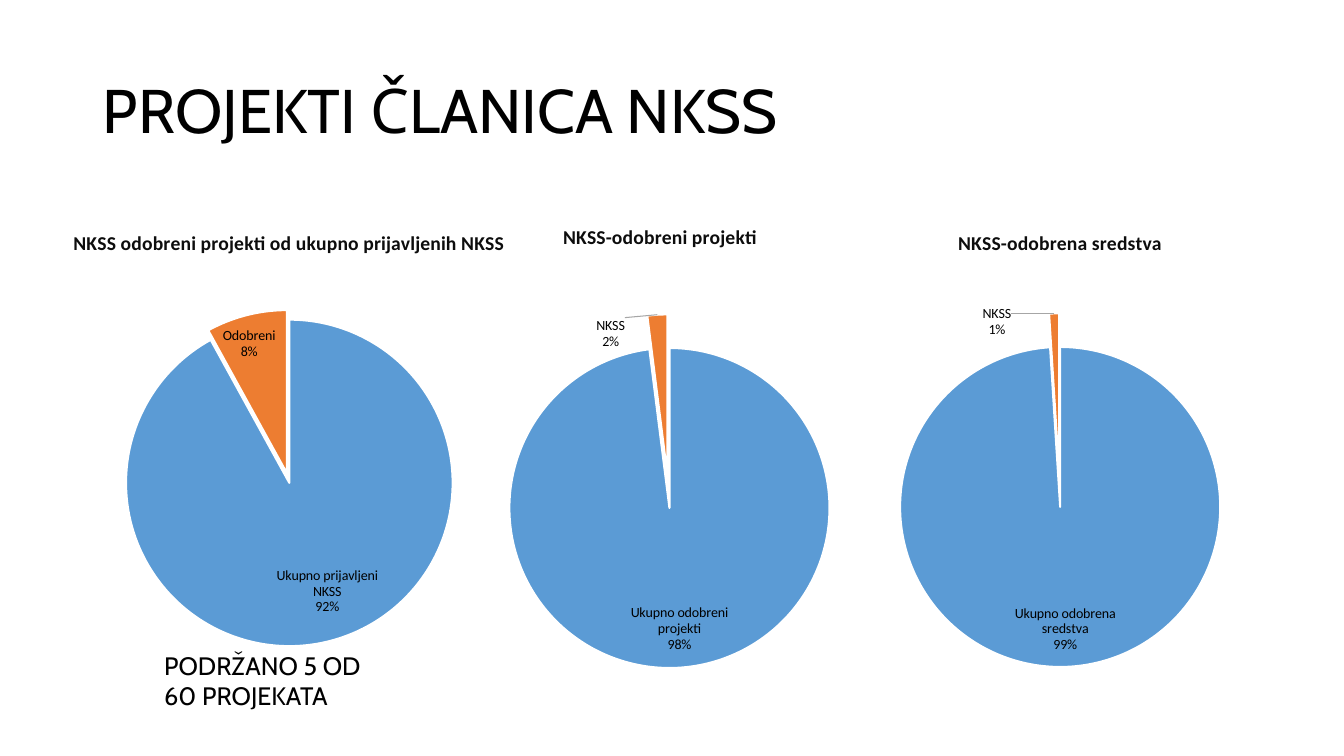
"""Build a slide with three pie charts on the projects of NKSS members."""
from lxml.etree import SubElement
from pptx import Presentation
from pptx.chart.data import CategoryChartData
from pptx.dml.color import RGBColor
from pptx.enum.chart import XL_CHART_TYPE, XL_LABEL_POSITION
from pptx.enum.text import MSO_ANCHOR, PP_ALIGN
from pptx.oxml.ns import qn
from pptx.util import Inches, Pt


def write_text(frame, text, *, size, font="Cabin", color="000000", bold=False, spacing=1.0):
    """Fill a text frame, one paragraph per line of text."""
    frame.text = text
    for paragraph in frame.paragraphs:
        paragraph.alignment = PP_ALIGN.LEFT
        paragraph.line_spacing = spacing
        paragraph.font.size = Pt(size)
        paragraph.font.name = font
        paragraph.font.bold = bold
        paragraph.font.color.rgb = RGBColor.from_string(color)


def make_layout(parent, index, **settings):
    """Insert a manual chart layout at the given child index."""
    layout = parent.makeelement(qn("c:layout"))
    manual = SubElement(layout, qn("c:manualLayout"))
    for name, value in settings.items():
        SubElement(manual, qn(f"c:{name}")).set("val", str(value))
    for existing in parent.findall(qn("c:layout")):
        parent.remove(existing)
    parent.insert(index, layout)


presentation = Presentation()
presentation.slide_width = Inches(13.33)
presentation.slide_height = Inches(7.5)
slide = presentation.slides.add_slide(presentation.slide_layouts[5])

title = slide.shapes.title
title.left, title.top, title.width, title.height = map(Inches, (0.92, 0.4, 11.5, 1.45))
title.text_frame.vertical_anchor = MSO_ANCHOR.MIDDLE
write_text(title.text_frame, "PROJEKTI ČLANICA NKSS", size=44, spacing=0.9)

pies = [
    dict(title="NKSS odobreni projekti od ukupno prijavljenih NKSS",
         shares={"Ukupno prijavljeni NKSS": 92, "Odobreni": 8},
         box=(-0.13, 2.1, 6, 4.55), title_at=(0.137, 0.03),
         plot=(0.23, 0.235, 0.54, 0.713), explosion=6, label_shift=None),
    dict(title="NKSS-odobreni projekti",
         shares={"Ukupno odobreni projekti": 98, "NKSS": 2},
         box=(4.55, 2.1, 4.18, 5.01), title_at=(0.239, 0.016),
         plot=(0.12, 0.27, 0.76, 0.634), explosion=21, label_shift=(-0.11, 0.08)),
    dict(title="NKSS-odobrena sredstva",
         shares={"Ukupno odobrena sredstva": 99, "NKSS": 1},
         box=(8.42, 2.1, 4.19, 5.01), title_at=(0.25, 0.028),
         plot=(0.12, 0.268, 0.76, 0.634), explosion=21, label_shift=(-0.135, 0.06)),
]

for pie in pies:
    chart_data = CategoryChartData(number_format="0")
    chart_data.categories = list(pie["shares"])
    chart_data.add_series("Series 1", list(pie["shares"].values()))
    chart = slide.shapes.add_chart(
        XL_CHART_TYPE.PIE, *map(Inches, pie["box"]), chart_data).chart
    chart.has_legend = False
    chart.font.size = Pt(10)
    chart.font.name = "Calibri"
    chart.font.color.rgb = RGBColor.from_string("000000")

    chart.has_title = True
    write_text(chart.chart_title.text_frame, pie["title"],
               size=14, font="Calibri", color="0D0D0D", bold=True)
    chart_title = chart.chart_title._element
    x, y = pie["title_at"]
    make_layout(chart_title, 1, xMode="edge", yMode="edge", x=x, y=y)

    plot = chart.plots[0]
    plot.vary_by_categories = True
    x, y, width, height = pie["plot"]
    make_layout(plot._element.getparent(), 0, layoutTarget="inner",
                xMode="edge", yMode="edge", x=x, y=y, w=width, h=height)

    series = plot.series[0]
    for index, color in enumerate(("5B9BD5", "ED7D31")):
        point_format = series.points[index].format
        point_format.fill.solid()
        point_format.fill.fore_color.rgb = RGBColor.from_string(color)
        point_format.line.color.rgb = RGBColor.from_string("FFFFFF")
        point_format.line.width = Pt(1.5)
    slice_element = series._element.findall(qn("c:dPt"))[1]
    explosion = slice_element.makeelement(qn("c:explosion"), {"val": str(pie["explosion"])})
    slice_element.find(qn("c:spPr")).addprevious(explosion)

    labels = series.data_labels
    labels.number_format = "0%"
    labels.number_format_is_linked = False
    labels.position = XL_LABEL_POSITION.BEST_FIT
    labels.show_category_name = True
    labels.show_percentage = True
    labels.show_value = False
    label_elements = [labels._element]

    if pie["label_shift"]:
        series.points[1].data_label.position = XL_LABEL_POSITION.OUTSIDE_END
        label = labels._element.find(qn("c:dLbl"))
        for name, value in (("showVal", "0"), ("showCatName", "1"), ("showPercent", "1")):
            label.find(qn(f"c:{name}")).set("val", value)
        x, y = pie["label_shift"]
        make_layout(label, 1, x=x, y=y)
        label.insert(2, label.makeelement(
            qn("c:numFmt"), {"formatCode": "0%", "sourceLinked": "0"}))
        label_elements.append(label)

    for element in label_elements:
        separator = element.makeelement(qn("c:separator"))
        separator.text = "\n"
        last_flag = element.find(qn("c:showBubbleSize"))
        if last_flag is None:
            last_flag = element.find(qn("c:showPercent"))
        last_flag.addnext(separator)

    leader_lines = SubElement(labels._element, qn("c:leaderLines"))
    leader_shape = SubElement(leader_lines, qn("c:spPr"))
    leader_line = SubElement(leader_shape, qn("a:ln"), w=str(Pt(0.75)))
    leader_fill = SubElement(leader_line, qn("a:solidFill"))
    SubElement(leader_fill, qn("a:srgbClr"), val="A6A6A6")

caption = slide.shapes.add_textbox(*map(Inches, (1.53, 6.4, 2.65, 0.71)))
caption.text_frame.word_wrap = True
write_text(caption.text_frame, "PODRŽANO 5 OD\n60 PROJEKATA", size=18)

presentation.save("out.pptx")
